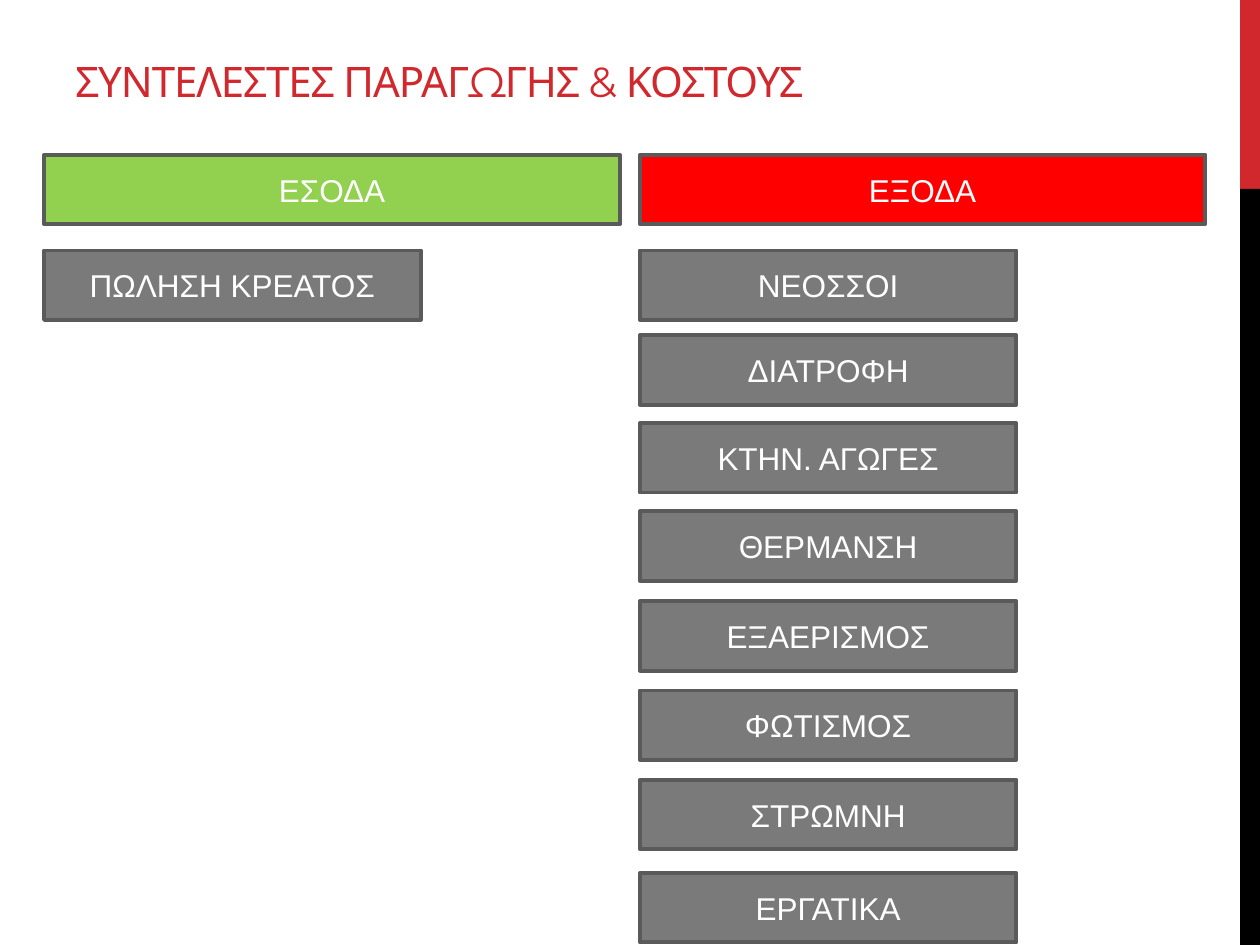
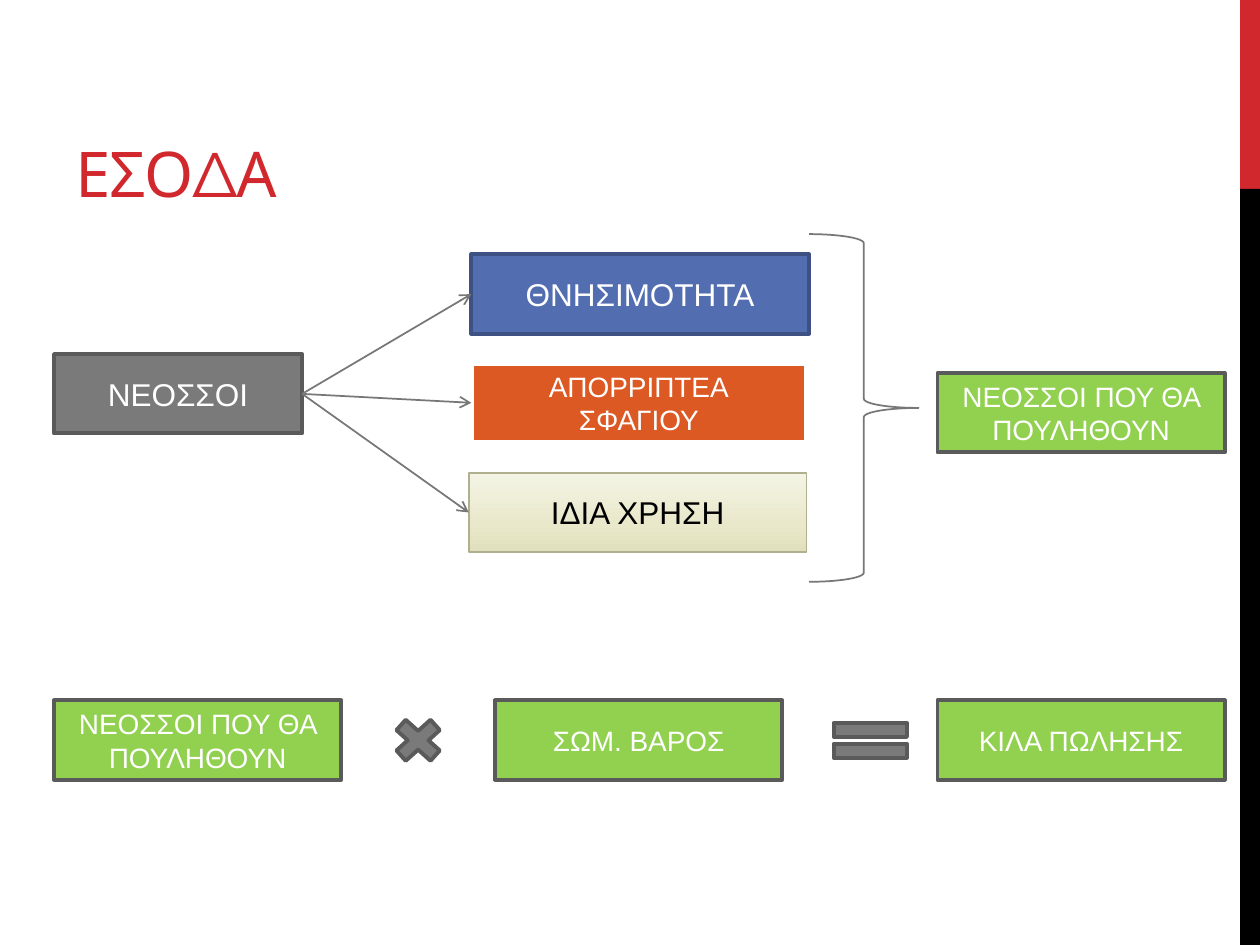
from copy import deepcopy
from dataclasses import dataclass

from pptx import Presentation
from pptx.dml.color import RGBColor
from pptx.enum.shapes import MSO_CONNECTOR, MSO_SHAPE
from pptx.enum.text import MSO_ANCHOR, PP_ALIGN
from pptx.oxml.ns import qn
from pptx.util import Cm, Pt


@dataclass(frozen=True)
class Theme:
    red: str = "D1282E"
    black: str = "000000"
    white: str = "FFFFFF"
    gray: str = "7A7A7A"
    border: str = "5A5A5A"
    thin_line: str = "777777"
    income: str = "92D050"
    expense: str = "FF0000"
    blue: str = "526DB0"
    blue_border: str = "3D5182"
    orange: str = "DC5924"
    cream_border: str = "B1B08E"
    cream_stops: tuple = ((0, "E1E0BC"), (0.35, "E9E8CB"), (1, "F4F4E5"))
    title_font: str = "Montserrat"
    body_font: str = "Arial"
    body_size: int = 18
    small_size: int = 16


theme = Theme()


def add_box(page, place, fill, text="", size=theme.body_size, border=theme.border,
            width=2.25, kind=MSO_SHAPE.RECTANGLE, color=theme.white):
    box = page.shapes.add_shape(kind, *[Cm(value) for value in place])
    box.shadow.inherit = False
    if fill:
        box.fill.solid()
        box.fill.fore_color.rgb = RGBColor.from_string(fill)
    else:
        box.fill.background()
    if border:
        box.line.color.rgb = RGBColor.from_string(border)
        box.line.width = Pt(width)
    else:
        box.line.fill.background()
    if text:
        frame = box.text_frame
        frame.text = text
        frame.word_wrap = True
        frame.vertical_anchor = MSO_ANCHOR.MIDDLE
        for para in frame.paragraphs:
            para.alignment = PP_ALIGN.CENTER
            para.font.name = theme.body_font
            for span in para.runs:
                span.font.name = theme.body_font
                span.font.size = Pt(size)
                span.font.color.rgb = RGBColor.from_string(color)
    return box


def add_page(deck, title, size, height):
    page = deck.slides.add_slide(deck.slide_layouts[6])
    add_box(page, (25, 0, 0.4, 3.81), theme.red, border=None)
    add_box(page, (25, 3.81, 0.4, 15.24), theme.black, border=None)
    box = page.shapes.add_textbox(Cm(1.27), Cm(0.43), Cm(21.23), Cm(height))
    frame = box.text_frame
    frame.text = title
    frame.word_wrap = True
    frame.vertical_anchor = MSO_ANCHOR.BOTTOM
    frame.margin_bottom = 0
    span = frame.paragraphs[0].runs[0]
    span.font.name = theme.title_font
    span.font.size = Pt(size)
    span.font.color.rgb = RGBColor.from_string(theme.red)
    span._r.get_or_add_rPr().set("spc", "-60")
    return page


deck = Presentation()
deck.slide_width = Cm(25.4)
deck.slide_height = Cm(19.05)

page = add_page(deck, "ΣΥΝΤΕΛΕΣΤΕΣ ΠΑΡΑΓΩΓΗΣ & ΚΟΣΤΟΥΣ", 24, 1.7)
income_left, expense_left = 0.89, 12.9
item_width, item_height = 7.59, 1.4
add_box(page, (income_left, 3.12, 11.61, item_height), theme.income, "ΕΣΟΔΑ")
add_box(page, (expense_left, 3.12, 11.4, item_height), theme.expense, "ΕΞΟΔΑ")
items = [
    (income_left, 5.05, "ΠΩΛΗΣΗ ΚΡΕΑΤΟΣ"),
    (expense_left, 5.05, "ΝΕΟΣΣΟΙ"),
    (expense_left, 6.76, "ΔΙΑΤΡΟΦΗ"),
    (expense_left, 8.53, "ΚΤΗΝ. ΑΓΩΓΕΣ"),
    (expense_left, 10.31, "ΘΕΡΜΑΝΣΗ"),
    (expense_left, 12.12, "ΕΞΑΕΡΙΣΜΟΣ"),
    (expense_left, 13.92, "ΦΩΤΙΣΜΟΣ"),
    (expense_left, 15.72, "ΣΤΡΩΜΝΗ"),
    (expense_left, 17.6, "ΕΡΓΑΤΙΚΑ"),
]
for left, top, label in items:
    add_box(page, (left, top, item_width, item_height), theme.gray, label)

page = add_page(deck, "ΕΣΟΔΑ", 36, 3.81)
chicks = add_box(page, (1.09, 7.14, 5, 1.6), theme.gray, "ΝΕΟΣΣΟΙ")
mortality = add_box(page, (9.5, 5.13, 6.81, 1.6), theme.blue, "ΘΝΗΣΙΜΟΤΗΤΑ",
                    border=theme.blue_border)
rejects = add_box(page, (9.5, 7.32, 6.76, 1.6), theme.orange, "ΑΠΟΡΡΙΠΤΕΑ\nΣΦΑΓΙΟΥ",
                  theme.small_size, theme.white, 3.25)
own_use = add_box(page, (9.45, 9.53, 6.81, 1.6), theme.white, "ΙΔΙΑ ΧΡΗΣΗ",
                  border=theme.cream_border, width=1, color=theme.black)
own_use.fill.gradient()
own_use.fill.gradient_angle = 90
stop_list = own_use.element.spPr.find(".//" + qn("a:gsLst"))
stop_list.insert(1, deepcopy(stop_list[0]))
for stop, (position, color) in zip(own_use.fill.gradient_stops, theme.cream_stops):
    stop.position = position
    stop.color.rgb = RGBColor.from_string(color)

for loss in (mortality, rejects, own_use):
    arrow = page.shapes.add_connector(MSO_CONNECTOR.STRAIGHT, 0, 0, 0, 0)
    arrow.begin_connect(chicks, 3)
    arrow.end_connect(loss, 1)
    arrow.line.color.rgb = RGBColor.from_string(theme.thin_line)
    arrow.line.width = Pt(1)
    line = arrow.line._get_or_add_ln()
    line.append(line.makeelement(qn("a:tailEnd"), {"type": "arrow"}))
    properties = arrow.element.spPr
    properties.append(properties.makeelement(qn("a:effectLst"), {}))

add_box(page, (16.31, 4.72, 2.21, 7.01), None, border=theme.thin_line, width=1,
        kind=MSO_SHAPE.RIGHT_BRACE)

sold_chicks = "ΝΕΟΣΣΟΙ ΠΟΥ ΘΑ ΠΟΥΛΗΘΟΥΝ"
formula_top = 14.12
results = [
    (18.9, 7.52, sold_chicks),
    (1.09, formula_top, sold_chicks),
    (9.98, formula_top, "ΣΩΜ. ΒΑΡΟΣ"),
    (18.9, formula_top, "ΚΙΛΑ ΠΩΛΗΣΗΣ"),
]
for left, top, label in results:
    add_box(page, (left, top, 5.79, 1.6), theme.income, label, theme.small_size)
for left, width, sign in ((7.77, 1.32, MSO_SHAPE.MATH_MULTIPLY),
                          (16.54, 2.01, MSO_SHAPE.MATH_EQUAL)):
    add_box(page, (left, 14.33, width, 1.19), theme.gray, kind=sign)

deck.save("out.pptx")
